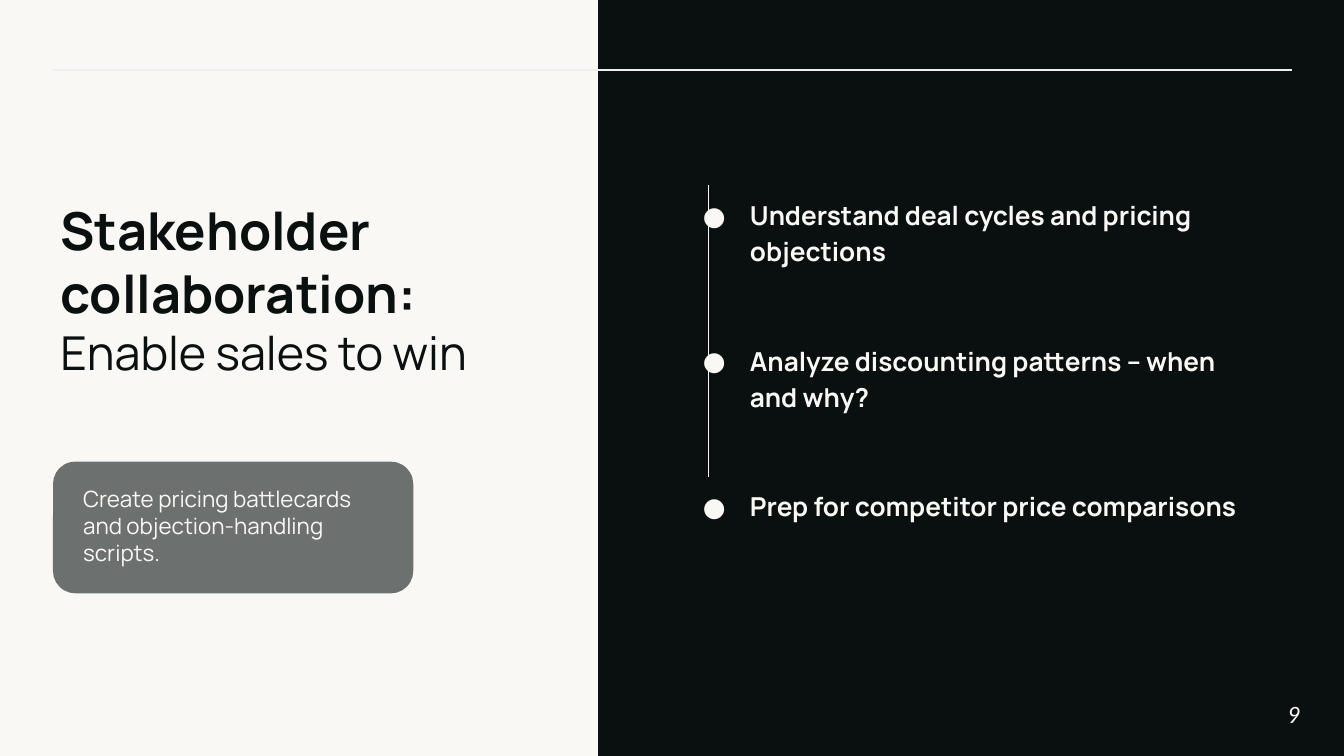
import pptx
import pptx.util
import pptx.dml.color
import pptx.enum.shapes
import pptx.enum.text
import pptx.oxml.ns
from dataclasses import dataclass
from lxml import etree

Inches, Pt = pptx.util.Inches, pptx.util.Pt
RGB = pptx.dml.color.RGBColor.from_string
SHAPE = pptx.enum.shapes.MSO_SHAPE
ANCHOR = pptx.enum.text.MSO_ANCHOR
qn = pptx.oxml.ns.qn


@dataclass
class Theme:
    ink = RGB("09100F")
    paper = RGB("F9F8F5")
    rule = RGB("EFEFEF")
    card = RGB("6C706F")
    font = "Manrope"
    number_font = "Lato"
    title = Pt(28)
    subtitle = Pt(25)
    body = Pt(14)
    small = Pt(12)


theme = Theme()

prs = pptx.Presentation()
prs.slide_width = Inches(10)
prs.slide_height = prs.slide_width * 9 // 16
s = prs.slides.add_slide(prs.slide_layouts[6])
s.background.fill.solid()
s.background.fill.fore_color.rgb = theme.paper


def add_text(left, top, width, height, anchor, inset=0):
    tf = s.shapes.add_textbox(Inches(left), Inches(top), Inches(width), Inches(height)).text_frame
    tf.word_wrap = True
    tf.vertical_anchor = anchor
    tf.margin_left = tf.margin_right = tf.margin_top = tf.margin_bottom = Inches(inset)
    return tf


def set_font(font, size, color, name=theme.font, bold=False, italic=False):
    font.name, font.size, font.bold, font.italic = name, size, bold, italic
    font.color.rgb = color


for kind, left, top, width, height, color, outlined in [
    (SHAPE.RECTANGLE, 4.45, -0.02, 5.55, 5.67, theme.ink, False),
    (SHAPE.ROUNDED_RECTANGLE, 0.4, 3.44, 2.67, 0.97, theme.card, True),
]:
    sp = s.shapes.add_shape(kind, Inches(left), Inches(top), Inches(width), Inches(height))
    sp.shadow.inherit = False
    sp.fill.solid()
    sp.fill.fore_color.rgb = color
    if outlined:
        sp.line.color.rgb = color
        sp.line.width = Pt(0.75)
    else:
        sp.line.fill.background()

for x1, y1, x2, y2, color in [
    (9.61, 0.52, 0.39, 0.52, theme.rule),
    (5.27, 1.38, 5.27, 3.55, theme.paper),
]:
    line = s.shapes.add_connector(
        pptx.enum.shapes.MSO_CONNECTOR.STRAIGHT, Inches(x1), Inches(y1), Inches(x2), Inches(y2))
    line.line.color.rgb = color
    line.line.width = Pt(0.75)
    etree.SubElement(line._element.spPr, qn("a:effectLst"))

p = add_text(0.45, 1.53, 3.35, 1.24, ANCHOR.MIDDLE).paragraphs[0]
for text, size, bold in [
    ("Stakeholder collaboration: ", theme.title, True),
    ("Enable sales to win", theme.subtitle, False),
]:
    r = p.add_run()
    r.text = text
    set_font(r.font, size, theme.ink, bold=bold)

p = add_text(0.52, 3.51, 2.45, 0.79, ANCHOR.TOP, inset=0.1).paragraphs[0]
p.text = "Create pricing battlecards and objection-handling scripts."
set_font(p.font, theme.small, theme.paper)

tf = add_text(5.08, 1.45, 4.32, 2.5, ANCHOR.TOP)
for i, text in enumerate([
    "Understand deal cycles and pricing objections",
    "Analyze discounting patterns – when and why?",
    "Prep for competitor price comparisons",
]):
    p = tf.add_paragraph() if i else tf.paragraphs[0]
    p.text = text
    p.line_spacing = 1.15
    p.space_before = Pt(39.4 if i else 0)
    set_font(p.font, theme.body, theme.paper, bold=True)
    pPr = p._p.get_or_add_pPr()
    pPr.set("marL", str(Inches(0.5)))
    pPr.set("indent", str(Inches(-0.35)))
    defaults = pPr.find(qn("a:defRPr"))
    defaults.addprevious(etree.Element(qn("a:buFont"), typeface=theme.font))
    defaults.addprevious(etree.Element(qn("a:buChar"), char="●"))

p = add_text(9.08, 5.1, 0.6, 0.43, ANCHOR.MIDDLE).paragraphs[0]
p.text = "9"
p.alignment = pptx.enum.text.PP_ALIGN.RIGHT
set_font(p.font, theme.small, theme.paper, name=theme.number_font, italic=True)

prs.save("out.pptx")
